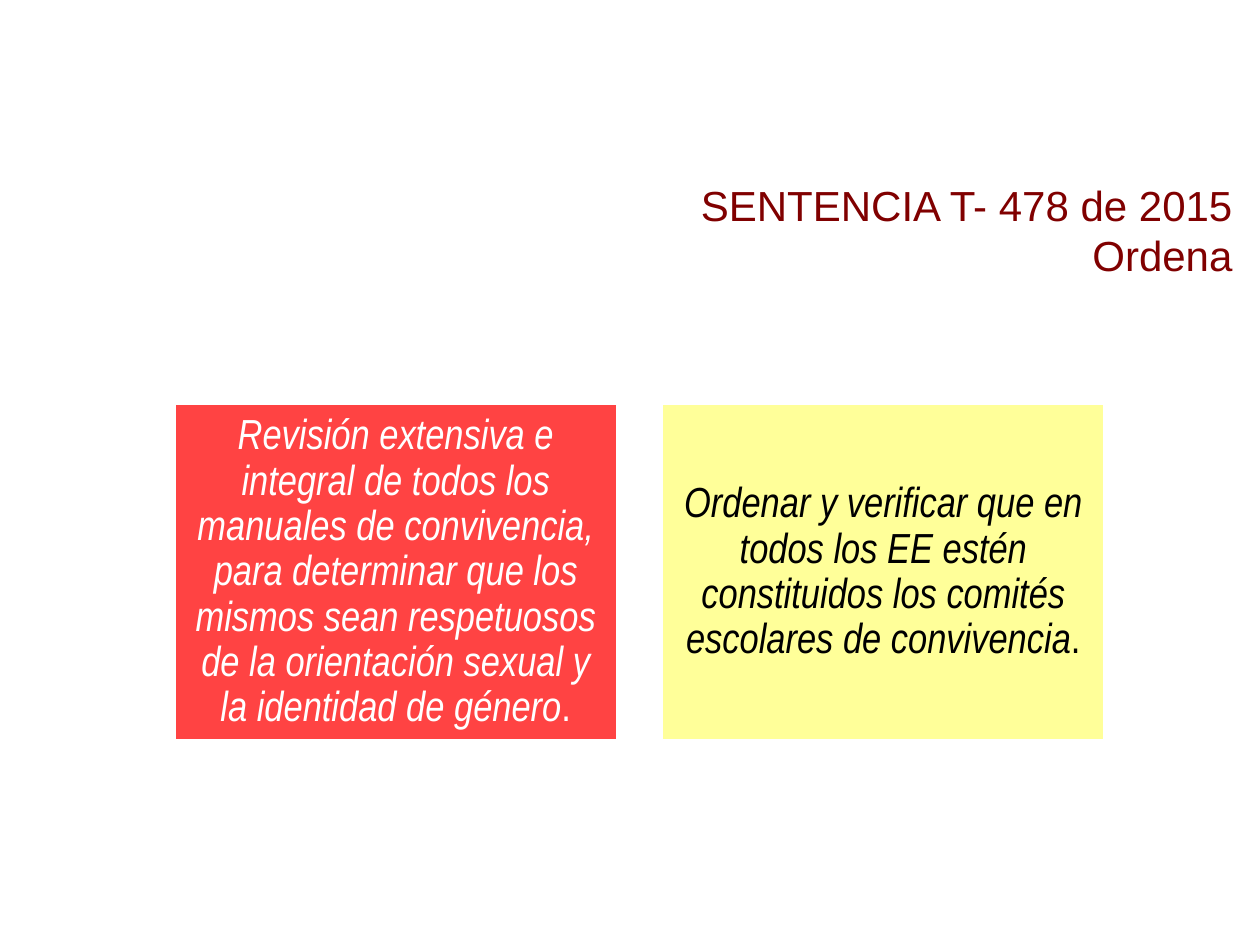
import pptx
import pptx.dml.color
import pptx.enum.shapes
import pptx.enum.text
import pptx.util
from pptx.util import Inches

ALIGN = pptx.enum.text.PP_ALIGN


def color(hex_value):
    return pptx.dml.color.RGBColor.from_string(hex_value)


def write(paragraph, text, *, font, ink, size=24, italic=False):
    """Append a run, with newlines in the text becoming line breaks."""
    for index, line in enumerate(text.split("\n")):
        if index:
            paragraph.add_line_break()
        run = paragraph.add_run()
        run.text = line
        run.font.name = font
        run.font.size = pptx.util.Pt(size)
        run.font.italic = italic
        run.font.color.rgb = color(ink)


class RulingSlide:
    title_font = "Arial"
    body_font = "Arial Narrow"
    title_ink = "800000"
    border = "FFFFFF"
    inset = Inches(0.1)

    def __init__(self, slide):
        self.slide = slide

    def prepare(self, shape, align):
        """Set up the text frame and return its first paragraph."""
        frame = shape.text_frame
        frame.word_wrap = True
        frame.vertical_anchor = pptx.enum.text.MSO_ANCHOR.MIDDLE
        frame.margin_left = frame.margin_right = self.inset
        frame.margin_top = frame.margin_bottom = self.inset
        paragraph = frame.paragraphs[0]
        paragraph.alignment = align
        return paragraph

    def title(self, text, left, top, width, height):
        heading = self.slide.shapes.add_textbox(left, top, width, height)
        write(self.prepare(heading, ALIGN.RIGHT), text,
              font=self.title_font, ink=self.title_ink)

    def order(self, text, fill, ink, left, top, width, height):
        """Draw a filled box with an italic order and an upright full stop."""
        box = self.slide.shapes.add_shape(
            pptx.enum.shapes.MSO_SHAPE.RECTANGLE, left, top, width, height)
        box.shadow.inherit = False
        box.fill.solid()
        box.fill.fore_color.rgb = color(fill)
        box.line.color.rgb = color(self.border)
        box.line.width = pptx.util.Pt(2)
        paragraph = self.prepare(box, ALIGN.CENTER)
        paragraph.line_spacing = 0.9
        write(paragraph, text, font=self.body_font, ink=ink, italic=True)
        write(paragraph, ".", font=self.body_font, ink=ink)


def main():
    deck = pptx.Presentation()
    deck.slide_width, deck.slide_height = Inches(10), Inches(7.5)
    ruling = RulingSlide(deck.slides.add_slide(deck.slide_layouts[6]))

    ruling.title("SENTENCIA T- 478 de 2015\nOrdena",
                 Inches(0.88), Inches(1.39), Inches(9), Inches(0.87))

    orders = [
        ("Revisión extensiva e integral de todos los manuales de convivencia, "
         "para determinar que los mismos sean respetuosos de la orientación "
         "sexual y la identidad de género", "FF4343", "FFFFFF"),
        ("Ordenar y verificar que en todos los EE estén constituidos los "
         "comités escolares de convivencia", "FFFF99", "000000"),
    ]
    width, gap = 3.52, 0.35
    for column, (text, fill, ink) in enumerate(orders):
        ruling.order(text, fill, ink, Inches(1.38 + column * (width + gap)),
                     Inches(3.2), Inches(width), Inches(2.68))

    deck.save("out.pptx")


if __name__ == "__main__":
    main()
